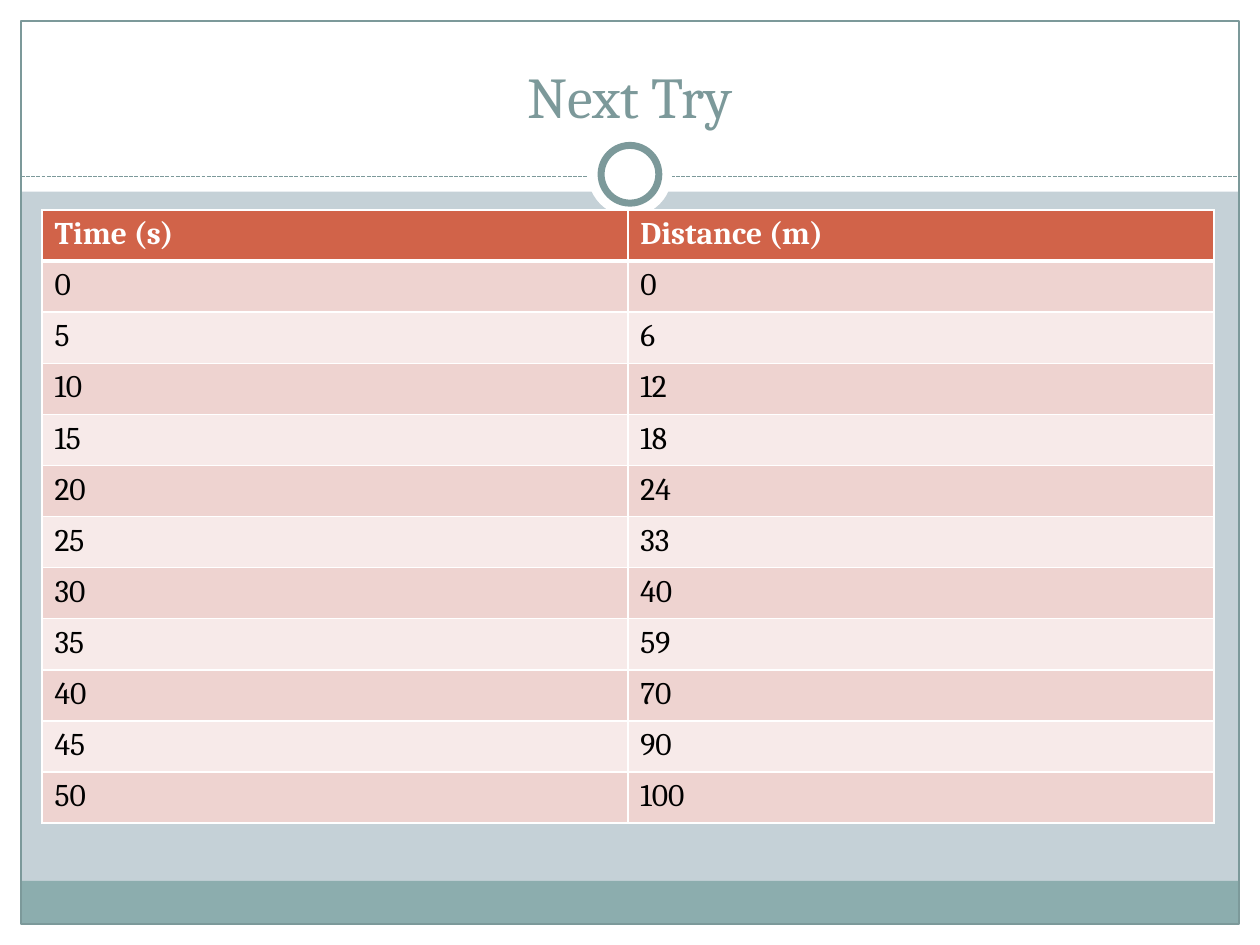
from dataclasses import dataclass
from typing import Optional

import pptx
import pptx.dml.color
import pptx.enum.dml
import pptx.enum.shapes
import pptx.enum.text
import pptx.oxml
import pptx.oxml.ns
import pptx.util

RGBColor = pptx.dml.color.RGBColor
ShapeKind = pptx.enum.shapes.MSO_SHAPE

WHITE = RGBColor(0xFF, 0xFF, 0xFF)
BLACK = RGBColor(0x00, 0x00, 0x00)
BACKGROUND = RGBColor(0xC5, 0xD1, 0xD7)
TEAL = RGBColor(0x7C, 0x99, 0x9A)
FOOTER_TEAL = RGBColor(0x8C, 0xAD, 0xAE)
HEADER_ORANGE = RGBColor(0xD1, 0x63, 0x49)
ROW_DARK = RGBColor(0xEE, 0xD3, 0xD0)
ROW_LIGHT = RGBColor(0xF7, 0xEA, 0xE9)

FONT = "Cambria"

# The slide is a grid of square units, twelve to the inch
COLUMNS, ROWS = 120, 90
MARGIN = 2
RULE_ROW = 16.8
RING_CENTRE_ROW = 16.6
TABLE_ROW_HEIGHT = 4.87

MEASUREMENTS = [
    ("Time (s)", "Distance (m)"),
    ("0", "0"),
    ("5", "6"),
    ("10", "12"),
    ("15", "18"),
    ("20", "24"),
    ("25", "33"),
    ("30", "40"),
    ("35", "59"),
    ("40", "70"),
    ("45", "90"),
    ("50", "100"),
]


@dataclass(frozen=True)
class Panel:
    left: float
    top: float
    width: float
    height: float
    fill: Optional[RGBColor] = None
    line_width: float = 0
    kind: ShapeKind = ShapeKind.RECTANGLE


def units(count: float) -> pptx.util.Emu:
    return pptx.util.Inches(count / 12)


def circle(diameter: float, line_width: float = 0) -> Panel:
    """A white circle centred on the medallion below the title."""
    return Panel(COLUMNS / 2 - diameter / 2, RING_CENTRE_ROW - diameter / 2,
                 diameter, diameter, WHITE, line_width, ShapeKind.OVAL)


PANELS_BELOW_RULE = [
    Panel(0, ROWS - MARGIN, COLUMNS, MARGIN, WHITE),
    Panel(0, 0, COLUMNS, 18.25, WHITE),
    Panel(0, 0, MARGIN, ROWS, WHITE),
    Panel(COLUMNS - MARGIN, 0, MARGIN, ROWS, WHITE),
    Panel(MARGIN, 83.9, COLUMNS - 2 * MARGIN, 4.1, FOOTER_TEAL),
    Panel(MARGIN, MARGIN, COLUMNS - 2 * MARGIN, ROWS - 2 * MARGIN, line_width=0.75),
]
MEDALLION = [circle(8), circle(5.5, line_width=4)]


def draw_panel(slide: pptx.slide.Slide, panel: Panel) -> None:
    shape = slide.shapes.add_shape(panel.kind, units(panel.left), units(panel.top),
                                   units(panel.width), units(panel.height))
    shape.shadow.inherit = False
    if panel.fill is None:
        shape.fill.background()
    else:
        shape.fill.solid()
        shape.fill.fore_color.rgb = panel.fill
    if panel.line_width:
        shape.line.color.rgb = TEAL
        shape.line.width = pptx.util.Pt(panel.line_width)
    else:
        shape.line.fill.background()


def draw_rule(slide: pptx.slide.Slide) -> None:
    rule = slide.shapes.add_connector(
        pptx.enum.shapes.MSO_CONNECTOR.STRAIGHT, units(MARGIN), units(RULE_ROW),
        units(COLUMNS - MARGIN), units(RULE_ROW))
    rule.line.color.rgb = TEAL
    rule.line.width = pptx.util.Pt(0.75)
    rule.line.dash_style = pptx.enum.dml.MSO_LINE.SQUARE_DOT
    properties = rule._element.spPr
    properties.append(properties.makeelement(pptx.oxml.ns.qn("a:effectLst"), {}))


def style_text(text_frame: pptx.text.text.TextFrame, size: float,
               color: RGBColor, bold: bool = False) -> None:
    for paragraph in text_frame.paragraphs:
        for run in paragraph.runs:
            run.font.name = FONT
            run.font.size = pptx.util.Pt(size)
            run.font.bold = bold
            run.font.color.rgb = color


def draw_title(slide: pptx.slide.Slide, text: str) -> None:
    box = slide.shapes.add_textbox(units(4), units(3), units(COLUMNS - 8), units(10))
    text_frame = box.text_frame
    text_frame.word_wrap = True
    text_frame.vertical_anchor = pptx.enum.text.MSO_ANCHOR.BOTTOM
    text_frame.text = text
    text_frame.paragraphs[0].alignment = pptx.enum.text.PP_ALIGN.CENTER
    style_text(text_frame, 33, TEAL)


def add_borders(cell: pptx.table._Cell, widths: dict[str, float]) -> None:
    """Put white borders ahead of the cell's fill, as the schema orders them."""
    properties = cell._tc.get_or_add_tcPr()
    for index, (side, width) in enumerate(widths.items()):
        border = pptx.oxml.parse_xml(
            f'<a:{side} {pptx.oxml.ns.nsdecls("a")} w="{pptx.util.Pt(width)}">'
            f'<a:solidFill><a:srgbClr val="{WHITE}"/></a:solidFill></a:{side}>')
        properties.insert(index, border)


def draw_table(slide: pptx.slide.Slide, rows: list[tuple[str, str]]) -> None:
    table = slide.shapes.add_table(
        len(rows), len(rows[0]), units(4), units(20), units(111.6),
        units(TABLE_ROW_HEIGHT * len(rows))).table
    for row_index, values in enumerate(rows):
        table.rows[row_index].height = units(TABLE_ROW_HEIGHT)
        header = row_index == 0
        band = ROW_DARK if row_index % 2 else ROW_LIGHT
        for column_index, value in enumerate(values):
            cell = table.cell(row_index, column_index)
            cell.text_frame.text = value
            style_text(cell.text_frame, 18, WHITE if header else BLACK, header)
            cell.fill.solid()
            cell.fill.fore_color.rgb = HEADER_ORANGE if header else band
            add_borders(cell, {"lnL": 1, "lnR": 1,
                               "lnT": 3 if row_index == 1 else 1,
                               "lnB": 3 if header else 1})


def main() -> None:
    presentation = pptx.Presentation()
    presentation.slide_width = units(COLUMNS)
    presentation.slide_height = units(ROWS)
    slide = presentation.slides.add_slide(presentation.slide_layouts[6])
    slide.background.fill.solid()
    slide.background.fill.fore_color.rgb = BACKGROUND

    # Frame, dashed rule and medallion
    for panel in PANELS_BELOW_RULE:
        draw_panel(slide, panel)
    draw_rule(slide)
    for panel in MEDALLION:
        draw_panel(slide, panel)

    # Content
    draw_title(slide, "Next Try")
    draw_table(slide, MEASUREMENTS)
    presentation.save("out.pptx")


if __name__ == "__main__":
    main()
